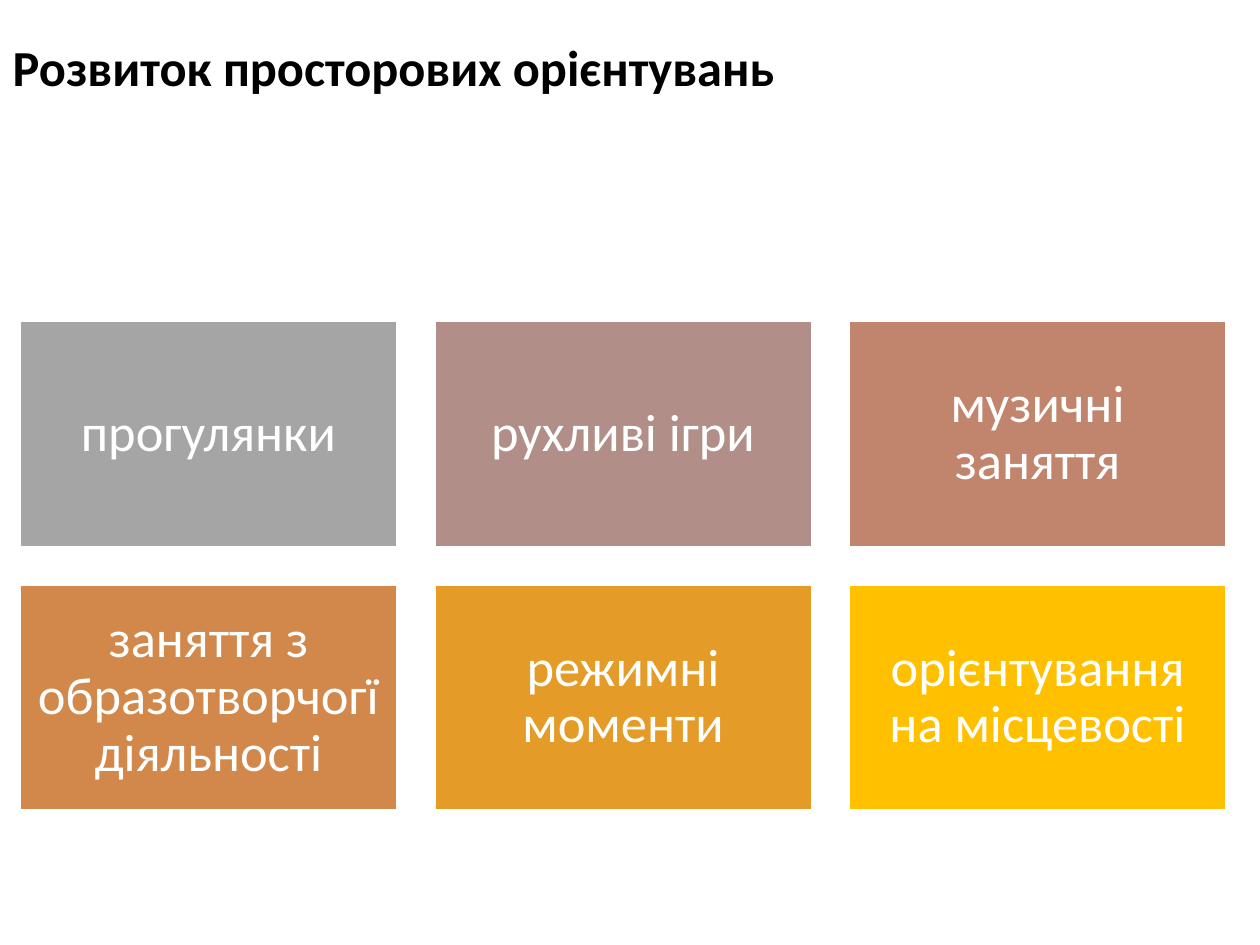
from pptx import Presentation
from pptx.dml.color import RGBColor
from pptx.enum.shapes import MSO_SHAPE
from pptx.enum.text import MSO_ANCHOR, MSO_AUTO_SIZE, PP_ALIGN
from pptx.util import Inches, Pt

RECTANGLE = MSO_SHAPE.RECTANGLE
MIDDLE = MSO_ANCHOR.MIDDLE
NO_AUTOFIT = MSO_AUTO_SIZE.NONE
LEFT, CENTER = PP_ALIGN.LEFT, PP_ALIGN.CENTER

FONT = "Calibri"
BLACK = RGBColor(0x00, 0x00, 0x00)
WHITE = RGBColor(0xFF, 0xFF, 0xFF)
GREY = RGBColor(0xA5, 0xA5, 0xA5)
MAUVE = RGBColor(0xB1, 0x8F, 0x88)
CLAY = RGBColor(0xC1, 0x84, 0x6C)
COPPER = RGBColor(0xD1, 0x88, 0x4A)
ORANGE = RGBColor(0xE5, 0x9B, 0x27)
GOLD = RGBColor(0xFF, 0xC0, 0x00)

ACTIVITIES = [
    ("прогулянки", GREY),
    ("рухливі ігри", MAUVE),
    ("музичні заняття", CLAY),
    ("заняття з образотворчогї діяльності", COPPER),
    ("режимні моменти", ORANGE),
    ("орієнтування на місцевості", GOLD),
]
COLUMNS = 3
GRID_LEFT, GRID_TOP = 0.16, 2.55
CARD_WIDTH, CARD_HEIGHT = 2.99, 1.79
GAP = 0.3
INSET = Inches(0.12)


def set_text(tf, text, size, color, align, bold=False):
    tf.text = text
    tf.word_wrap = True
    tf.auto_size = NO_AUTOFIT
    tf.vertical_anchor = MIDDLE
    p = tf.paragraphs[0]
    p.alignment = align
    p.line_spacing = 0.9
    font = p.runs[0].font
    font.name = FONT
    font.size = Pt(size)
    font.bold = bold
    font.color.rgb = color


def add_title(s, text):
    title = s.shapes.title
    title.left, title.top = Inches(0), Inches(0.31)
    title.width, title.height = Inches(8.62), Inches(0.49)
    set_text(title.text_frame, text, 28.8, BLACK, LEFT, bold=True)


def add_card(s, left, top, text, color):
    sp = s.shapes.add_shape(RECTANGLE, Inches(left), Inches(top),
                            Inches(CARD_WIDTH), Inches(CARD_HEIGHT))
    sp.shadow.inherit = False
    sp.fill.solid()
    sp.fill.fore_color.rgb = color
    sp.line.color.rgb = WHITE
    sp.line.width = Pt(1)
    tf = sp.text_frame
    tf.margin_left = tf.margin_right = INSET
    tf.margin_top = tf.margin_bottom = INSET
    set_text(tf, text, 30, WHITE, CENTER)


def add_card_grid(s, activities):
    for i, (text, color) in enumerate(activities):
        row, column = divmod(i, COLUMNS)
        add_card(s, GRID_LEFT + column * (CARD_WIDTH + GAP),
                 GRID_TOP + row * (CARD_HEIGHT + GAP), text, color)


def main():
    prs = Presentation()
    prs.slide_width, prs.slide_height = Inches(10), Inches(7.5)
    s = prs.slides.add_slide(prs.slide_layouts.get_by_name("Title Only"))
    add_title(s, "Розвиток просторових орієнтувань")
    add_card_grid(s, ACTIVITIES)
    prs.save("out.pptx")


if __name__ == "__main__":
    main()
